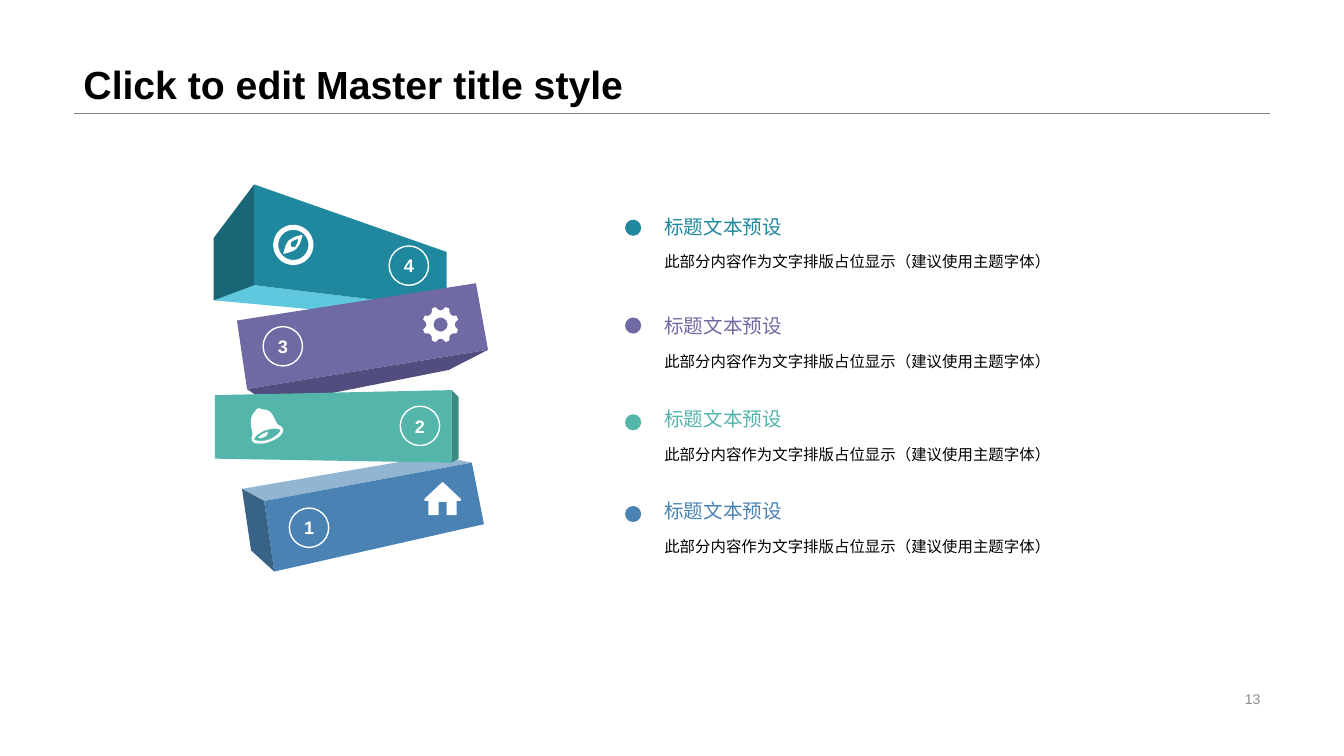
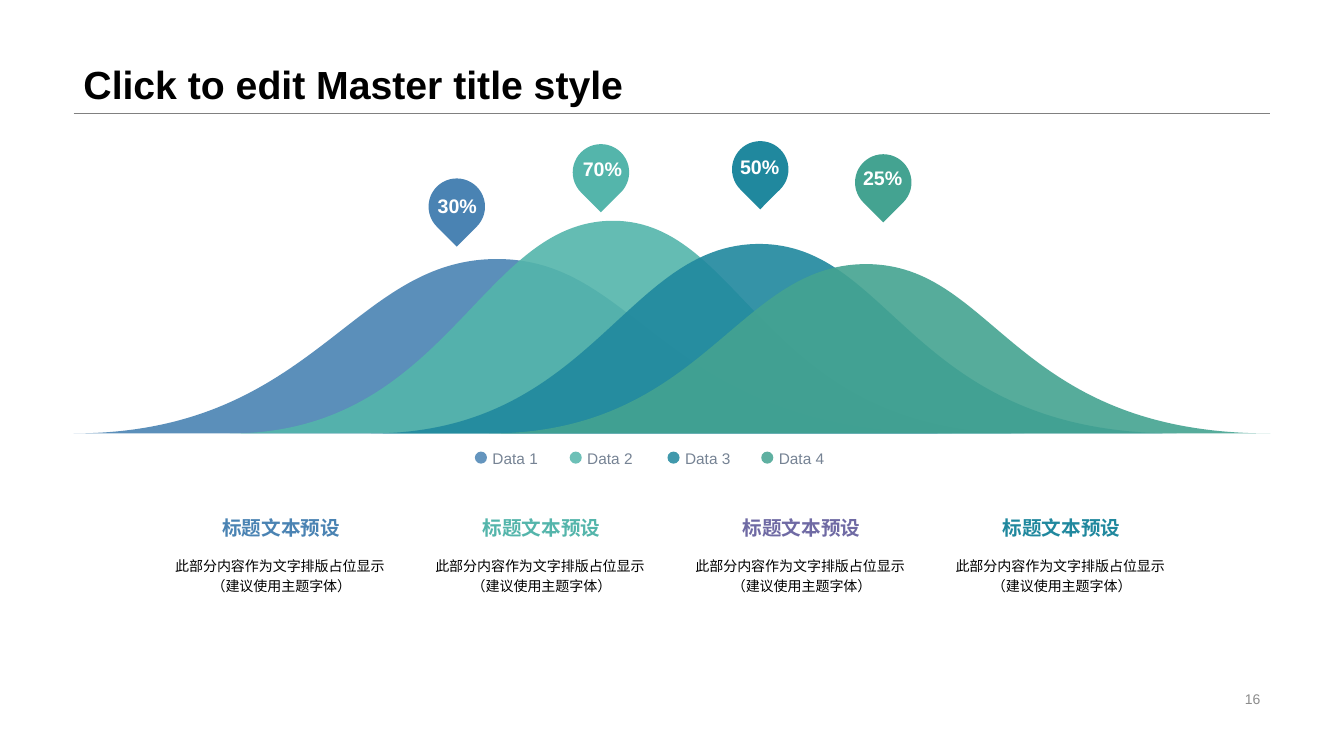
from math import cos, radians, sin

from lxml import etree
from pptx import Presentation
from pptx.dml.color import RGBColor
from pptx.enum import shapes, text
from pptx.oxml.ns import qn
from pptx.util import Inches, Pt

# Shared look
FONT = "Arial"
TEAL, PURPLE, MINT, BLUE, GREEN = "20889E", "6F6AA4", "54B5AB", "4A83B3", "44A391"
WHITE, BLACK, RULE, PAGE_GREY, LEGEND_GREY = "FFFFFF", "000000", "808080", "8C8C8C", "768394"
LEFT, RIGHT, RULE_Y = 0.73, 12.6, 1.12
TITLE = "Click to edit Master title style"
HEADING = "标题文本预设"
BODY = "此部分内容作为文字排版占位显示"
BODY_NOTE = "（建议使用主题字体）"
ALIGN, ANCHOR, KIND = text.PP_ALIGN, text.MSO_ANCHOR, shapes.MSO_SHAPE
NO_INSETS, INSETS = (0, 0), (0.1, 0.05)


def color(code):
    return RGBColor.from_string(code)


# Element helpers
def write(frame, words, size, code, bold=False, align=ALIGN.LEFT,
          anchor=ANCHOR.TOP, insets=INSETS, wrap=True, spacing=None):
    frame.word_wrap = wrap
    frame.vertical_anchor = anchor
    frame.margin_left = frame.margin_right = Inches(insets[0])
    frame.margin_top = frame.margin_bottom = Inches(insets[1])
    para = frame.paragraphs[0]
    para.text = words
    para.alignment = align
    if spacing:
        para.line_spacing = spacing
    font = para.font
    font.name, font.size, font.bold = FONT, Pt(size), bold
    font.color.rgb = color(code)


def add_text(page, place, words, size, code, **style):
    box = page.shapes.add_textbox(*map(Inches, place))
    write(box.text_frame, words, size, code, **style)


def paint(shape, fill, opacity=100):
    shape.shadow.inherit = False
    shape.line.fill.background()
    shape.fill.solid()
    shape.fill.fore_color.rgb = color(fill)
    if opacity < 100:
        tint = shape._element.spPr.find(qn("a:solidFill")).find(qn("a:srgbClr"))
        etree.SubElement(tint, qn("a:alpha")).set("val", str(opacity * 1000))


def add_preset(page, kind, place, fill, opacity=100):
    shape = page.shapes.add_shape(kind, *map(Inches, place))
    paint(shape, fill, opacity)
    return shape


def add_outline(page, contours, fill, opacity=100):
    """Fill closed contours: a start, then line ends (x, y) or cubics (six numbers)."""
    builder = None
    for start, *segments in contours:
        origin = [Inches(value) for value in start]
        if builder is None:
            builder = page.shapes.build_freeform(*origin, scale=1.0)
        else:
            builder.move_to(*origin)
        builder.add_line_segments(
            [(Inches(segment[i]), Inches(segment[i + 1]))
             for segment in segments for i in range(0, len(segment), 2)], close=True)
    shape = builder.convert_to_shape()
    bend(shape, [segment for contour in contours for segment in contour[1:]])
    paint(shape, fill, opacity)


def bend(shape, segments):
    """Merge the three lines laid out for each cubic into one curve."""
    lines = iter(list(shape._element.spPr.iter(qn("a:lnTo"))))
    for segment in segments:
        curve = next(lines)
        if len(segment) == 6:
            curve.tag = qn("a:cubicBezTo")
            for line in (next(lines), next(lines)):
                curve.append(line[0])
                line.getparent().remove(line)


def polar(center, radius, angle):
    return (center[0] + radius * cos(radians(angle)),
            center[1] + radius * sin(radians(angle)))


def circle(center, radius):
    """Four cubics; each control lies 29 degrees in, at 1.14 radii."""
    contour = [polar(center, radius, 0)]
    for angle in range(0, 360, 90):
        contour.append((*polar(center, radius * 1.14, angle + 29),
                        *polar(center, radius * 1.14, angle + 61),
                        *polar(center, radius, angle + 90)))
    return contour


def add_page(deck, number):
    page = deck.slides.add_slide(deck.slide_layouts[6])
    rule = page.shapes.add_connector(
        shapes.MSO_CONNECTOR.STRAIGHT, *map(Inches, (LEFT, RULE_Y, RIGHT, RULE_Y)))
    rule.line.color.rgb = color(RULE)
    rule.line.width = Pt(0.25)
    etree.SubElement(rule._element.spPr, qn("a:effectLst"))
    add_text(page, (LEFT, 0, RIGHT - LEFT, RULE_Y), TITLE, 28, BLACK,
             bold=True, anchor=ANCHOR.BOTTOM, spacing=0.9)
    add_text(page, (9.42, 6.82, 3.18, 0.23), number, 10, PAGE_GREY,
             align=ALIGN.RIGHT, anchor=ANCHOR.MIDDLE)
    return page


# Icons
def add_compass(page):
    center = (2.91, 2.43)
    needle = [(2.81, 2.52), (2.81, 2.52, 2.91, 2.5, 2.94, 2.47),
              (2.99, 2.42, 3, 2.33, 3, 2.33), (3, 2.33, 2.91, 2.34, 2.86, 2.39),
              (2.83, 2.42, 2.81, 2.52, 2.81, 2.52)]
    eye = [(2.89, 2.4), (2.91, 2.39, 2.94, 2.37, 2.96, 2.37),
           (2.96, 2.4, 2.94, 2.43, 2.93, 2.45), (2.91, 2.45, 2.9, 2.45, 2.89, 2.45),
           (2.88, 2.43, 2.88, 2.42, 2.89, 2.4)]
    add_outline(page, [circle(center, 0.2), circle(center, 0.15), needle, eye], WHITE)


def add_gear(page):
    center = (4.37, 3.22)
    rim = [polar(center, 0.18, -16)]
    for notch in range(0, 360, 45):
        first, second, end, tooth = (
            polar(center, radius, notch + turn)
            for radius, turn in ((0.13, -8), (0.13, 8), (0.18, 16), (0.18, 29)))
        rim += [(*first, *second, *end), tooth]
    add_outline(page, [rim, circle(center, 0.07)], WHITE)


def add_bell(page):
    body = [(2.74, 4.19), (2.7, 4.09, 2.67, 4.06, 2.6, 4.06),
            (2.57, 4.06, 2.58, 4.04, 2.56, 4.05), (2.53, 4.06, 2.56, 4.06, 2.53, 4.08),
            (2.48, 4.13, 2.48, 4.18, 2.5, 4.28), (2.52, 4.32, 2.48, 4.33, 2.5, 4.37),
            (2.5, 4.4, 2.59, 4.42, 2.68, 4.38), (2.77, 4.35, 2.82, 4.29, 2.81, 4.26),
            (2.79, 4.21, 2.77, 4.24, 2.74, 4.19)]
    mouth = [(2.67, 4.36), (2.59, 4.39, 2.53, 4.37, 2.52, 4.36),
             (2.52, 4.35, 2.55, 4.3, 2.63, 4.27), (2.73, 4.24, 2.78, 4.25, 2.78, 4.27),
             (2.79, 4.27, 2.75, 4.33, 2.67, 4.36)]
    clapper = [(2.64, 4.29), (2.6, 4.3, 2.58, 4.32, 2.56, 4.34),
               (2.57, 4.35, 2.59, 4.35, 2.61, 4.34), (2.65, 4.33, 2.66, 4.3, 2.66, 4.28),
               (2.66, 4.28, 2.65, 4.29, 2.64, 4.29)]
    add_outline(page, [body, mouth, clapper], WHITE)


def add_house(page):
    add_outline(page, [[(4.57, 4.95), (4.4, 4.79), (4.4, 4.78, 4.38, 4.78, 4.38, 4.79),
                        (4.21, 4.95), (4.2, 4.96, 4.21, 4.97, 4.22, 4.97), (4.25, 4.97),
                        (4.25, 5.11), (4.35, 5.11), (4.35, 4.98), (4.43, 4.98),
                        (4.43, 5.11), (4.53, 5.11), (4.53, 4.97), (4.56, 4.97),
                        (4.57, 4.97, 4.58, 4.96, 4.57, 4.95)]], WHITE)


# Slide with the stacked blocks
BLOCK_FACES = [
    ("5FC8DF", [(2.12, 2.98), (2.52, 2.83), (4.43, 3.06), (4.08, 3.16)]),
    ("186676", [(2.52, 2.83), (2.52, 1.83), (2.12, 2.36), (2.12, 2.98)]),
    (TEAL, [(2.52, 1.83), (4.43, 2.5), (4.43, 3.06), (2.52, 2.83)]),
    ("92B5D2", [(4.68, 4.59), (2.62, 4.97), (2.4, 4.85), (4.33, 4.52)]),
    (BLUE, [(2.62, 4.97), (2.72, 5.67), (4.8, 5.2), (4.68, 4.59)]),
    ("386286", [(2.4, 4.85), (2.62, 4.97), (2.72, 5.67), (2.49, 5.46)]),
    (PURPLE, [(4.72, 2.81), (2.35, 3.18), (2.45, 3.86), (4.84, 3.47)]),
    ("514D7E", [(4.84, 3.47), (2.45, 3.86), (2.68, 4.02), (4.45, 3.67)]),
    (MINT, [(2.13, 3.92), (4.48, 3.87), (4.48, 4.59), (2.13, 4.55)]),
    ("3C8B83", [(4.48, 3.87), (4.55, 3.94), (4.55, 4.55), (4.48, 4.59)]),
]
BADGES = [("4", 3.86, 2.44), ("3", 2.61, 3.24), ("2", 3.97, 4.03), ("1", 2.87, 5.04)]
# colour, top of dot, top of heading
ENTRIES = [(TEAL, 2.18, 2.08), (PURPLE, 3.15, 3.07), (MINT, 4.11, 3.99), (BLUE, 5.02, 4.9)]


def add_badge(page, digit, left, top):
    badge = add_preset(page, KIND.OVAL, (left, top, 0.39, 0.39), WHITE)
    badge.fill.background()
    badge.line.color.rgb = color(WHITE)
    badge.line.width = Pt(1)
    write(badge.text_frame, digit, 12.9, WHITE, bold=True, align=ALIGN.CENTER,
          anchor=ANCHOR.MIDDLE, wrap=False)


def add_entry(page, code, dot_top, top):
    add_preset(page, KIND.OVAL, (6.2, dot_top, 0.16, 0.16), code)
    add_text(page, (6.49, top, 1.38, 0.34), HEADING, 14, code, wrap=False)
    add_text(page, (6.49, top + 0.34, 4.72, 0.38), BODY + BODY_NOTE, 11, BLACK, spacing=1.2)


def build_blocks(deck):
    page = add_page(deck, "13")
    for code, corners in BLOCK_FACES:
        add_outline(page, [corners], code)
    for badge in BADGES:
        add_badge(page, *badge)
    for add_icon in (add_compass, add_gear, add_bell, add_house):
        add_icon(page)
    for entry in ENTRIES:
        add_entry(page, *entry)


# Slide with the overlapping hills
BASE = 4.3
# colour, top, then x of left end, foot, rise, peak, fall, tail and right end
HILLS = [(BLUE, 2.57, 0.73, 3.12, 3.48, 4.93, 6.38, 6.57, 9.44),
         (MINT, 2.19, 2.28, 4.44, 4.76, 6.08, 7.39, 7.56, 10.16),
         (TEAL, 2.42, 3.68, 5.87, 6.2, 7.53, 8.86, 9.03, 11.67),
         (GREEN, 2.62, 4.85, 6.98, 7.3, 8.59, 9.88, 10.04, 12.6)]
# colour, value, pin left and top, label left and top
PINS = [(BLUE, "30%", (4.25, 1.77), (4.34, 1.92)), (MINT, "70%", (5.68, 1.43), (5.78, 1.55)),
        (TEAL, "50%", (7.26, 1.4), (7.34, 1.53)), (GREEN, "25%", (8.48, 1.53), (8.56, 1.64))]
LEGEND = [("Data 1", BLUE, 4.71), ("Data 2", MINT, 5.65),
          ("Data 3", TEAL, 6.62), ("Data 4", GREEN, 7.55)]
CENTERED = dict(align=ALIGN.CENTER, anchor=ANCHOR.MIDDLE, insets=NO_INSETS)


def add_hill(page, code, top, left, foot, rise, peak, fall, tail, right):
    outline = [(left, BASE), (foot, BASE, rise, top, peak, top),
               (fall, top, tail, BASE, right, BASE)]
    add_outline(page, [outline], code, opacity=90)


def add_pin(page, code, value, pin, label):
    drop = add_preset(page, KIND.TEAR, (*pin, 0.56, 0.56), code)
    drop.rotation = 135
    add_text(page, (*label, 0.39, 0.24), value, 14, WHITE, bold=True, wrap=False, **CENTERED)


def add_legend_key(page, name, code, left):
    add_preset(page, KIND.OVAL, (left, 4.48, 0.12, 0.12), code, opacity=85)
    add_text(page, (left + 0.16, 4.45, 0.48, 0.19), name, 11, LEGEND_GREY,
             wrap=False, **CENTERED)


def add_column(page, index, code):
    left = 1.58 + index * 2.58
    add_text(page, (left, 5.08, 2.42, 0.31), HEADING, 14, code,
             bold=True, wrap=False, **CENTERED)
    add_text(page, (left, 5.38, 2.42, 0.63), BODY + " \n" + BODY_NOTE, 10, BLACK,
             spacing=1.2, **CENTERED)


def build_hills(deck):
    page = add_page(deck, "16")
    for hill in HILLS:
        add_hill(page, *hill)
    for pin in PINS:
        add_pin(page, *pin)
    for key in LEGEND:
        add_legend_key(page, *key)
    for index, code in enumerate((BLUE, MINT, PURPLE, TEAL)):
        add_column(page, index, code)


def main():
    deck = Presentation()
    deck.slide_width, deck.slide_height = Inches(13.33), Inches(7.5)
    build_blocks(deck)
    build_hills(deck)
    deck.save("out.pptx")


if __name__ == "__main__":
    main()
